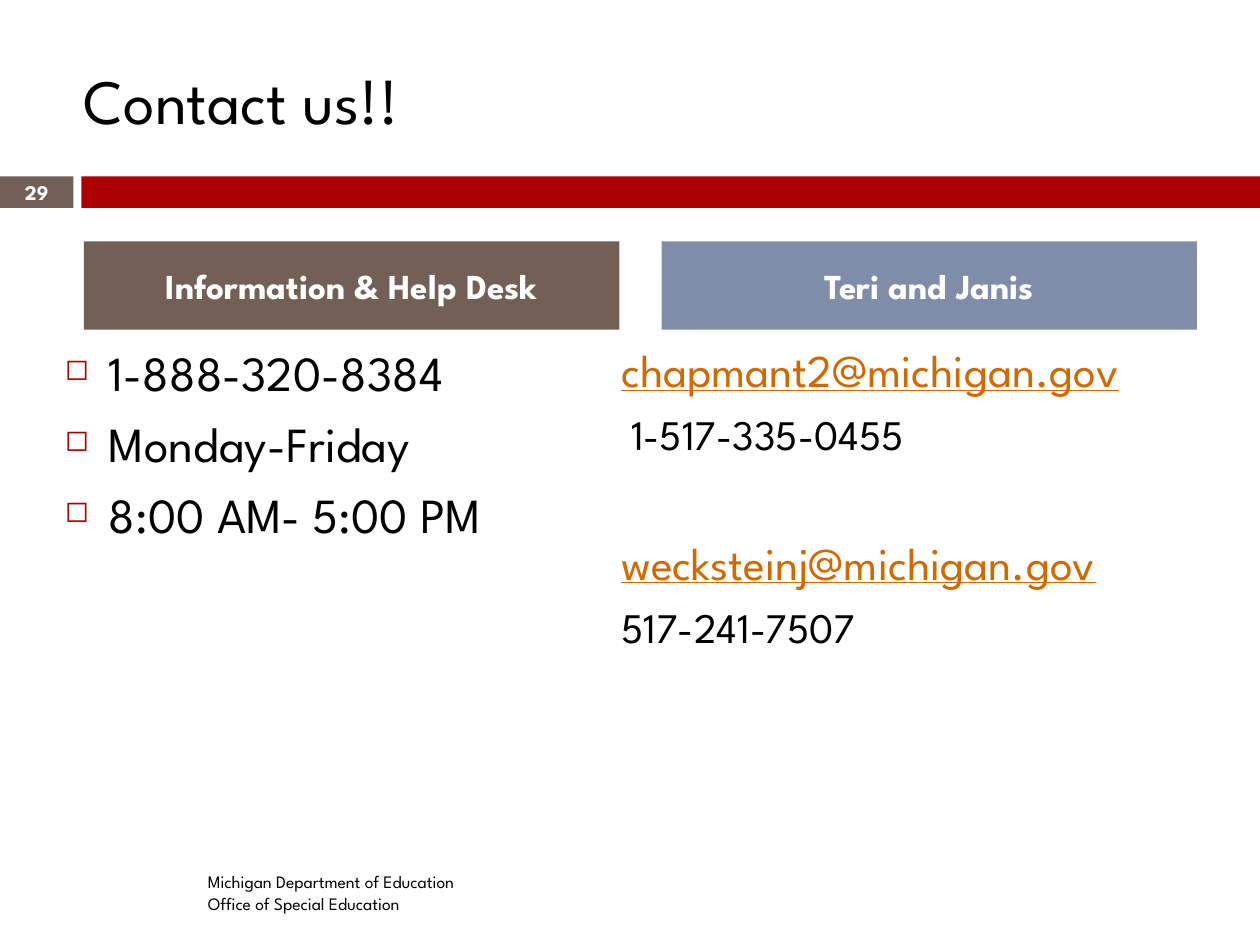
"""Build the contact slide with two headed columns."""
from dataclasses import dataclass

from lxml import etree
from pptx import Presentation
from pptx.dml.color import RGBColor
from pptx.enum.shapes import MSO_SHAPE
from pptx.enum.text import MSO_ANCHOR, PP_ALIGN
from pptx.oxml.ns import qn
from pptx.util import Pt

RECTANGLE = MSO_SHAPE.RECTANGLE
TOP, MIDDLE = MSO_ANCHOR.TOP, MSO_ANCHOR.MIDDLE
LEFT, CENTER = PP_ALIGN.LEFT, PP_ALIGN.CENTER


@dataclass(frozen=True)
class Theme:
    """Hold the font, colours, type sizes and spacing of the slide."""
    font: str = "League Spartan"
    black: str = "000000"
    white: str = "FFFFFF"
    red: str = "AD0101"
    brown: str = "726056"
    blue: str = "808DA9"
    link: str = "D26900"
    title: float = 36
    bullet: float = 28
    email: float = 26
    phone: float = 24
    heading: float = 20
    number: float = 11.9
    footer: float = 10
    gap: float = 7
    entry_gap: float = 43
    bullet_indent: float = 25.2


THEME = Theme()


def style_paragraph(para, size, color, bold=False, underline=False, align=LEFT):
    """Apply alignment and character formatting to a paragraph."""
    para.alignment = align
    for span in para.runs:
        font = span.font
        font.name = THEME.font
        font.size = Pt(size)
        font.bold = bold
        font.underline = underline
        font.color.rgb = RGBColor.from_string(color)


def add_block(page, bounds, color):
    """Add a plain filled rectangle."""
    block = page.shapes.add_shape(RECTANGLE, *map(Pt, bounds))
    block.shadow.inherit = False
    block.fill.solid()
    block.fill.fore_color.rgb = RGBColor.from_string(color)
    block.line.fill.background()
    return block


def add_text(page, bounds, lines, size, anchor=MIDDLE, inset=True):
    """Add a wrapping text box with one paragraph per line."""
    frame = page.shapes.add_textbox(*map(Pt, bounds)).text_frame
    frame.word_wrap = True
    frame.vertical_anchor = anchor
    if not inset:
        frame.margin_left = frame.margin_right = 0
        frame.margin_top = frame.margin_bottom = 0
    frame.text = "\n".join(lines)
    for para in frame.paragraphs:
        style_paragraph(para, size, THEME.black)
    return frame.paragraphs


def add_heading(page, left, text, color):
    """Add a filled column heading."""
    frame = add_block(page, (left, 138, 306, 50.4), color).text_frame
    frame.word_wrap = True
    frame.vertical_anchor = MIDDLE
    frame.text = text
    style_paragraph(frame.paragraphs[0], THEME.heading, THEME.white, bold=True, align=CENTER)


def set_indent(para, margin, first=0):
    """Set the left margin and first-line indent of a paragraph."""
    properties = para._p.get_or_add_pPr()
    properties.set("marL", str(Pt(margin)))
    properties.set("indent", str(Pt(first)))
    return properties


def add_bullet(para):
    """Give a paragraph a hanging square bullet."""
    properties = set_indent(para, THEME.bullet_indent, -THEME.bullet_indent)
    color = etree.SubElement(properties, qn("a:buClr"))
    etree.SubElement(color, qn("a:srgbClr"), val=THEME.red)
    etree.SubElement(properties, qn("a:buSzPct"), val="60000")
    etree.SubElement(properties, qn("a:buChar"), char="◻")


def add_help_desk(page):
    """Add the bulleted help desk details."""
    lines = ["1-888-320-8384", "Monday-Friday", "8:00 AM- 5:00 PM"]
    paragraphs = add_text(page, (30, 192, 324, 282), lines, THEME.bullet, TOP)
    for index, para in enumerate(paragraphs):
        if index:
            para.space_before = Pt(THEME.gap)
        add_bullet(para)


def add_people(page):
    """Add the e-mail addresses, each with a phone number below."""
    lines = ["chapmant2@michigan.gov", "1-517-335-0455",
             "wecksteinj@michigan.gov", "517-241-7507"]
    paragraphs = add_text(page, (348, 192, 372, 294), lines, THEME.phone, TOP)
    for email in paragraphs[::2]:
        style_paragraph(email, THEME.email, THEME.link, underline=True)
    for phone in paragraphs[1::2]:
        phone.space_before = Pt(THEME.gap)
    paragraphs[2].space_before = Pt(THEME.entry_gap)
    set_indent(paragraphs[1], 5.5)


def add_frame(page):
    """Add the title, the banner with page number and the footer."""
    add_block(page, (46.5, 100.8, 673.5, 18), THEME.red)
    add_block(page, (0, 100.8, 42, 18), THEME.brown)
    number = add_text(page, (0, 100.2, 42, 19.2), ["29"], THEME.number)
    style_paragraph(number[0], THEME.number, THEME.white, bold=True, align=CENTER)
    add_text(page, (48, 18, 642, 78), ["Contact us!!"], THEME.title, inset=False)
    footer = ["Michigan Department of Education", "Office of Special Education"]
    add_text(page, (118.8, 498, 175, 24), footer, THEME.footer, inset=False)


def main():
    """Build and save the deck."""
    deck = Presentation()
    deck.slide_width, deck.slide_height = Pt(720), Pt(540)
    page = deck.slides.add_slide(deck.slide_layouts[6])
    add_frame(page)
    add_heading(page, 48, "Information & Help Desk", THEME.brown)
    add_help_desk(page)
    add_heading(page, 378, "Teri and Janis", THEME.blue)
    add_people(page)
    deck.save("out.pptx")


if __name__ == "__main__":
    main()
